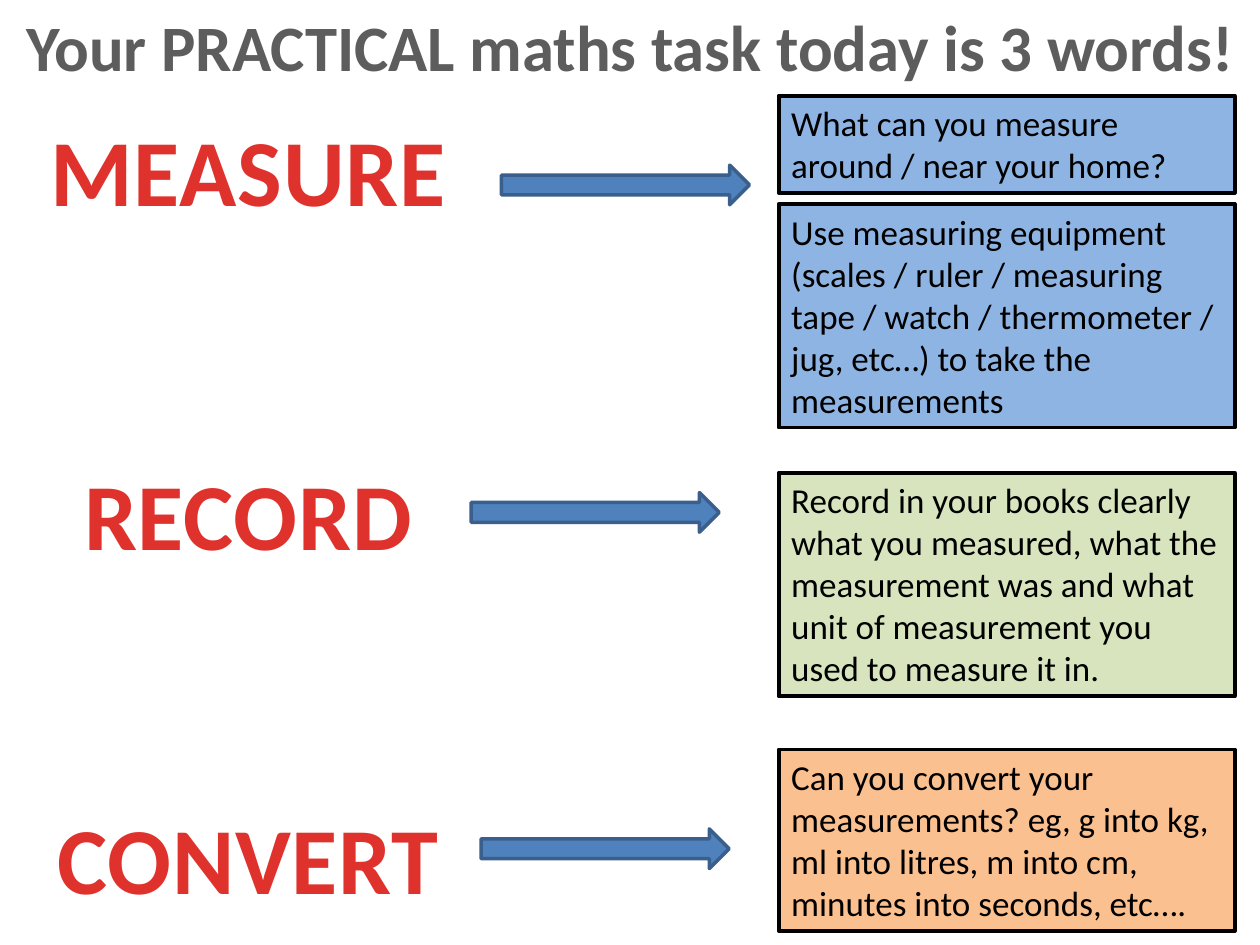
from dataclasses import dataclass

from pptx import Presentation
from pptx import util as u
from pptx.dml.color import RGBColor
from pptx.enum import shapes, text
from pptx.oxml.ns import qn


@dataclass(frozen=True)
class Theme:
    font: str = "Calibri"
    heading: str = "5D5D5D"
    word: str = "E0322D"
    ink: str = "000000"
    arrow: str = "4F81BD"
    arrow_edge: str = "3A5F8C"
    blue: str = "8EB4E3"
    green: str = "D7E4BD"
    orange: str = "FAC090"
    heading_size: float = 37
    word_size: float = 54
    note_size: float = 20


THEME = Theme()
HEADING = "Your PRACTICAL maths task today is 3 words!"
WORDS = ["MEASURE", "RECORD", "CONVERT"]
ARROWS = [(10.11, 3.33), (9.5, 9.93), (9.7, 16.71)]
NOTES = [
    ("What can you measure around / near your home?", 1.93, 2, THEME.blue),
    ("Use measuring equipment (scales / ruler / measuring tape / watch / "
     "thermometer / jug, etc…) to take the measurements", 4.11, 5, THEME.blue),
    ("Record in your books clearly what you measured, what the measurement "
     "was and what unit of measurement you used to measure it in.",
     9.53, 5, THEME.green),
    ("Can you convert your measurements? eg, g into kg, ml into litres, "
     "m into cm, minutes into seconds, etc….", 15.11, 4, THEME.orange),
]
NOTE_LEFT, NOTE_WIDTH = 15.7, 9.19
LINE_HEIGHT, NOTE_PADDING = 0.85, 0.26
WORD_GAP = 2 * 1.22 * THEME.word_size


def write(box, lines, size, color, bold=False, align=text.PP_ALIGN.LEFT,
          anchor=text.MSO_ANCHOR.TOP, wrap=True, gap=0, tracking=0):
    frame = box.text_frame
    frame.word_wrap = wrap
    frame.auto_size = text.MSO_AUTO_SIZE.NONE
    frame.vertical_anchor = anchor
    for index, line in enumerate(lines):
        para = frame.add_paragraph() if index else frame.paragraphs[0]
        para.alignment = align
        para.space_before = u.Pt(gap if index else 0)
        span = para.add_run()
        span.text = line
        span.font.name = THEME.font
        span.font.size = u.Pt(size)
        span.font.bold = bold
        span.font.color.rgb = RGBColor.from_string(color)
    if tracking:
        for properties in box.element.iter(qn("a:rPr")):
            properties.set("spc", str(round(tracking * 100)))


def add_block(page, kind, place, fill, edge, weight):
    block = page.shapes.add_shape(kind, *map(u.Cm, place))
    block.shadow.inherit = False
    block.fill.solid()
    block.fill.fore_color.rgb = RGBColor.from_string(fill)
    block.line.color.rgb = RGBColor.from_string(edge)
    block.line.width = u.Pt(weight)
    return block


def main():
    deck = Presentation()
    deck.slide_width, deck.slide_height = u.Cm(25.4), u.Cm(19.05)
    page = deck.slides.add_slide(deck.slide_layouts.get_by_name("Title Only"))

    title = page.shapes.title
    title.left, title.top = u.Cm(0), u.Cm(0)
    title.width, title.height = u.Cm(25.4), u.Cm(1.83)
    write(title, [HEADING], THEME.heading_size, THEME.heading, bold=True,
          align=text.PP_ALIGN.CENTER)

    words = page.shapes.add_textbox(*map(u.Cm, (0.71, 2.13, 8.59, 16.41)))
    write(words, WORDS, THEME.word_size, THEME.word, bold=True,
          align=text.PP_ALIGN.CENTER, wrap=False, gap=WORD_GAP, tracking=0.5)

    for left, top in ARROWS:
        add_block(page, shapes.MSO_SHAPE.RIGHT_ARROW, (left, top, 5, 0.8),
                  THEME.arrow, THEME.arrow_edge, 2)

    for note, top, line_count, fill in NOTES:
        height = NOTE_PADDING + LINE_HEIGHT * line_count
        box = add_block(page, shapes.MSO_SHAPE.RECTANGLE,
                        (NOTE_LEFT, top, NOTE_WIDTH, height),
                        fill, THEME.ink, 2.25)
        write(box, [note], THEME.note_size, THEME.ink)

    deck.save("out.pptx")


if __name__ == "__main__":
    main()
